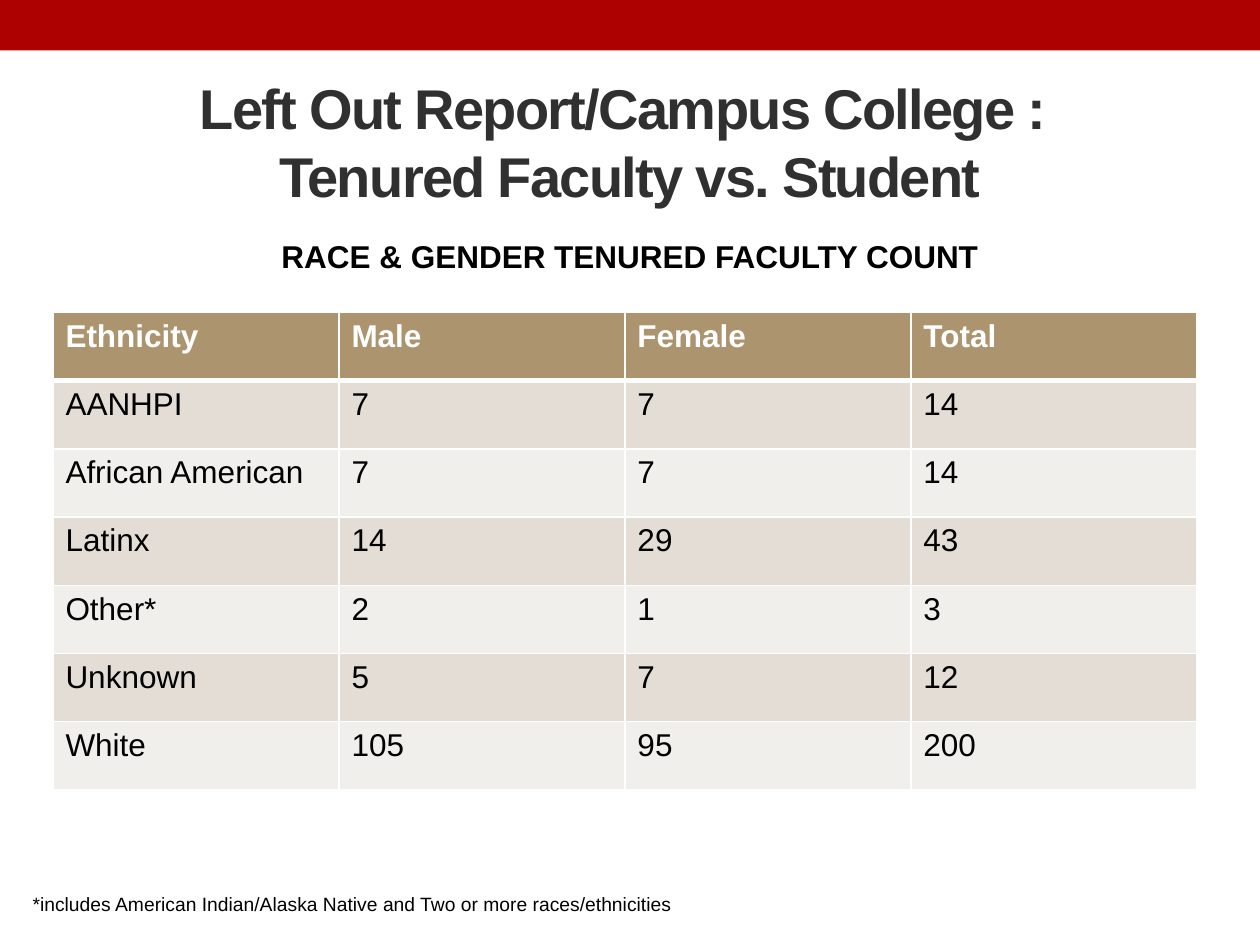
"""Build the tenured faculty count slide."""
from lxml import etree
from pptx import Presentation
from pptx.dml.color import RGBColor
from pptx.enum.shapes import MSO_SHAPE
from pptx.enum.text import MSO_ANCHOR, PP_ALIGN
from pptx.oxml.ns import qn
from pptx.util import Inches, Pt

RECTANGLE = MSO_SHAPE.RECTANGLE
LEFT, CENTER = PP_ALIGN.LEFT, PP_ALIGN.CENTER
TOP, MIDDLE = MSO_ANCHOR.TOP, MSO_ANCHOR.MIDDLE

RED, TAN, WHITE, BLACK, CHARCOAL = "AD0101", "AC956E", "FFFFFF", "000000", "303030"
BANDS = ["E3DDD5", "F1EFEB"]

TITLE = "Left Out Report/Campus College : \vTenured Faculty vs. Student"
SUBTITLE = "RACE & GENDER TENURED\u00a0FACULTY COUNT".replace("\u00a0", " ")
FOOTNOTE = "*includes American Indian/Alaska Native and Two or more races/ethnicities"
HEADER = ("Ethnicity", "Male", "Female", "Total")
COUNTS = [
    ("AANHPI", 7, 7, 14),
    ("African American", 7, 7, 14),
    ("Latinx", 14, 29, 43),
    ("Other*", 2, 1, 3),
    ("Unknown", 5, 7, 12),
    ("White", 105, 95, 200),
]
TEXTS = [
    (TITLE, (0.5, 0.58, 9, 1.08), CENTER, MIDDLE, -100,
     {"size": Pt(32), "bold": True}, CHARCOAL),
    (SUBTITLE, (0.84, 1.83, 8.32, 0.71), CENTER, TOP, 0,
     {"size": Pt(18), "bold": True}, BLACK),
    (FOOTNOTE, (0.16, 7.03, 5.41, 0.29), LEFT, TOP, 0,
     {"size": Pt(11), "bold": False}, BLACK),
]
TABLE_BOX = (0.42, 2.48, 9.08, 3.79)


def rgb(color):
    return RGBColor.from_string(color)


def inches(box):
    return [Inches(length) for length in box]


def style(font, values, color):
    for name, value in {"name": "Arial", **values}.items():
        setattr(font, name, value)
    font.color.rgb = rgb(color)


def add_text(slide, text, box, align, anchor, spacing, values, color):
    frame = slide.shapes.add_textbox(*inches(box)).text_frame
    frame.word_wrap = True
    frame.vertical_anchor = anchor
    paragraph = frame.paragraphs[0]
    paragraph.text = text
    paragraph.alignment = align
    for run in paragraph.runs:
        style(run.font, values, color)
        if spacing:
            run.font._element.set("spc", str(spacing))


def set_borders(cell, widths):
    properties = cell._tc.get_or_add_tcPr()
    for side, width in widths.items():
        line = etree.SubElement(properties, qn(f"a:ln{side}"), w=str(Pt(width)))
        fill = etree.SubElement(line, qn("a:solidFill"))
        etree.SubElement(fill, qn("a:srgbClr"), val=WHITE)


def add_counts(slide):
    rows = [HEADER, *COUNTS]
    table = slide.shapes.add_table(len(rows), len(HEADER), *inches(TABLE_BOX)).table
    for r, row in enumerate(rows):
        is_header = r == 0
        for c, value in enumerate(row):
            cell = table.cell(r, c)
            cell.text = str(value)
            set_borders(cell, {"L": 1, "R": 1, "T": 3 if r == 1 else 1,
                               "B": 3 if is_header else 1})
            cell.fill.solid()
            cell.fill.fore_color.rgb = rgb(TAN if is_header else BANDS[(r - 1) % 2])
            style(cell.text_frame.paragraphs[0].runs[0].font,
                  {"size": Pt(18), "bold": is_header}, WHITE if is_header else BLACK)


def main():
    deck = Presentation()
    deck.slide_width, deck.slide_height = Inches(10), Inches(7.5)
    slide = deck.slides.add_slide(deck.slide_layouts[6])
    banner = slide.shapes.add_shape(RECTANGLE, *inches((0, 0, 10, 0.4)))
    banner.shadow.inherit = False
    banner.fill.solid()
    banner.fill.fore_color.rgb = rgb(RED)
    banner.line.fill.background()
    for text in TEXTS:
        add_text(slide, *text)
    add_counts(slide)
    deck.save("out.pptx")


if __name__ == "__main__":
    main()
